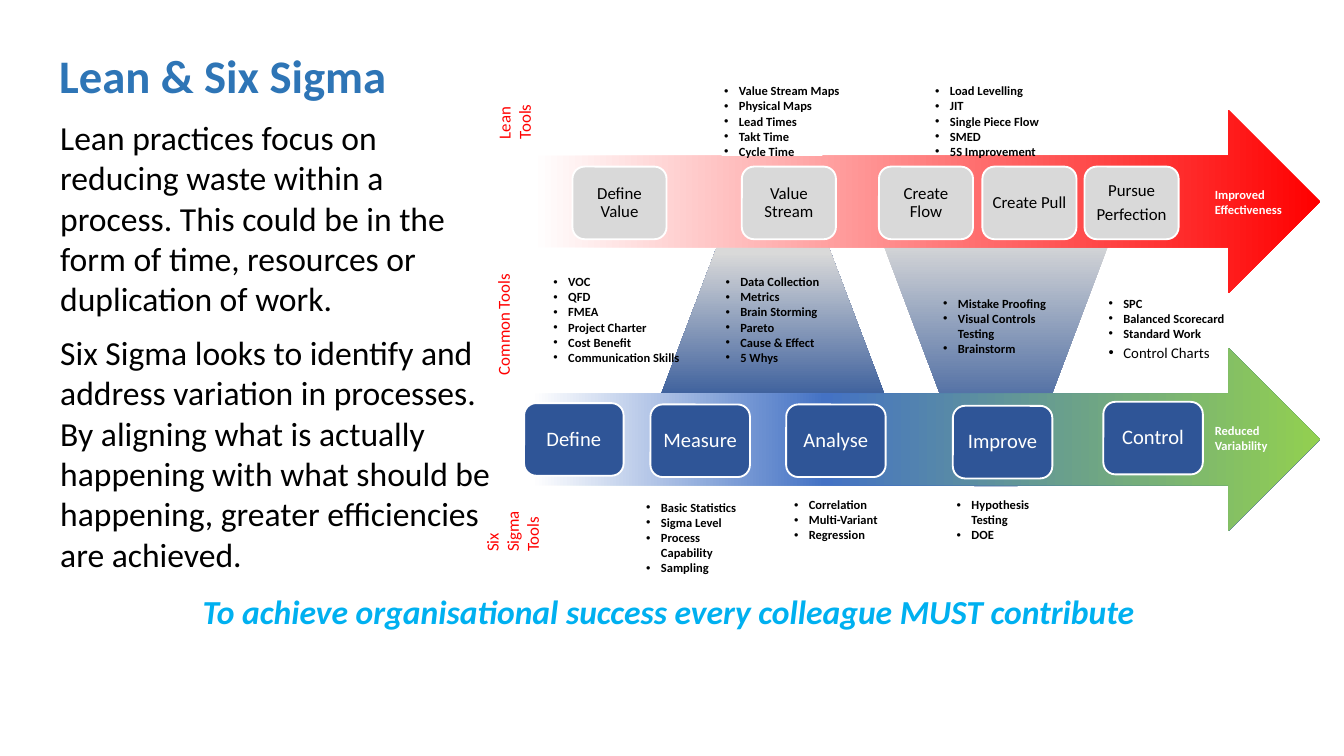
from lxml.etree import SubElement
from pptx import Presentation
from pptx.dml.color import RGBColor
from pptx.enum.shapes import MSO_SHAPE as Preset
from pptx.enum.text import MSO_ANCHOR as Anchor, MSO_AUTO_SIZE as AutoSize, PP_ALIGN as Align
from pptx.oxml import parse_xml
from pptx.oxml.ns import nsdecls, qn
from pptx.util import Emu, Pt

EMU_PER_PX = 9144
FONT = "Calibri"
SMALL = 6.75
COLOURS = {
    "white": "FFFFFF", "black": "000000", "grey": "D9D9D9", "navy": "2F5597",
    "red": "FF0000", "blue": "4472C4", "green": "92D050", "title": "2E75B6",
    "slogan": "00B0F0",
}
LEAN_STEPS = [
    (426, 124, ["Define Value"]), (552, 124, ["Value Stream"]),
    (654, 124, ["Create Flow"]), (731, 124, ["Create Pull"]),
    (807, 124, ["Pursue", "Perfection"]),
]
SIGMA_STEPS = [
    (390, 300, ["Define"]), (484, 301, ["Measure"]), (585, 301, ["Analyse"]),
    (709, 302, ["Improve"]), (821, 299, ["Control"]),
]
TOOL_LISTS = [
    ((530, 199, 92, 78), ["Data Collection", "Metrics", "Brain Storming", "Pareto",
                          "Cause & Effect", "5 Whys"]),
    ((692, 215, 113, 84), ["Mistake Proofing", "Visual Controls Testing", "Brainstorm"]),
    ((686, 57, 101, 67), ["Load Levelling", "JIT", "Single Piece Flow", "SMED",
                          "5S Improvement"]),
    ((529, 57, 110, 67), ["Value Stream Maps", "Physical Maps", "Lead Times",
                          "Takt Time", "Cycle Time"]),
    ((471, 367, 98, 78), ["Basic Statistics", "Sigma Level", "Process Capability",
                          "Sampling"]),
    ((581, 365, 98, 56), ["Correlation", "Multi-Variant", "Regression"]),
    ((702, 365, 98, 56), ["Hypothesis Testing", "DOE"]),
    ((815, 215, 113, 73), ["SPC", "Balanced Scorecard", "Standard Work"]),
    ((402, 199, 117, 129), ["VOC", "QFD", "FMEA", "Project Charter", "Cost Benefit",
                            "Communication Skills"]),
]
ROW_LABELS = [
    ((346, 57, 73, 40), ["Lean", "Tools"]),
    ((349, 360, 65, 56), ["Six Sigma", "Tools"]),
    ((302, 204, 145, 25), ["Common Tools"]),
]
OUTCOMES = [
    ((894, 134, 72, 33), ["Improved", "Effectiveness"]),
    ((894, 310, 65, 33), ["Reduced Variability"]),
]
INTRO = [
    "Lean practices focus on reducing waste within a process. This could be in the "
    "form of time, resources or duplication of work.",
    "Six Sigma looks to identify and address variation in processes. By aligning what "
    "is actually happening with what should be happening, greater efficiencies are achieved.",
]


def px(length):
    """Turn px into EMU."""
    return Emu(length * EMU_PER_PX)


def rgb(colour):
    """Look up a named colour."""
    return RGBColor.from_string(COLOURS[colour])


def write(frame, lines, size, colour, bold=False, italic=False, align=Align.LEFT,
          spacing=None, after=0, gap=0, bulleted=False):
    """Fill a text frame with one paragraph per line."""
    frame.word_wrap = True
    for index, line in enumerate(lines):
        para = frame.paragraphs[0] if index == 0 else frame.add_paragraph()
        para.alignment = align
        para.space_after = Pt(after)
        para.space_before = Pt(gap if index else 0)
        if spacing:
            para.line_spacing = spacing
        if bulleted:
            props = para._p.get_or_add_pPr()
            props.set("marL", str(px(11)))
            props.set("indent", str(-px(11)))
            SubElement(props, qn("a:buFont"), typeface="Arial")
            SubElement(props, qn("a:buChar"), char="•")
        run = para.add_run()
        run.text = line
        run.font.name = FONT
        run.font.size = Pt(size)
        run.font.bold = bold
        run.font.italic = italic
        run.font.color.rgb = rgb(colour)


def add_text(slide, area, lines, size, colour, rotation=0, **style):
    """Add a text box that grows with its text."""
    box = slide.shapes.add_textbox(*map(px, area))
    box.rotation = rotation
    write(box.text_frame, lines, size, colour, **style)
    box.text_frame.auto_size = AutoSize.SHAPE_TO_FIT_TEXT


def add_plain(slide, preset, area):
    """Add a preset shape without shadow or outline."""
    shape = slide.shapes.add_shape(preset, *map(px, area))
    shape.shadow.inherit = False
    shape.line.fill.background()
    return shape


def add_gradient(slide, preset, area, stops, angle=0, rotation=0):
    """Add a preset shape with a linear gradient."""
    shape = add_plain(slide, preset, area)
    shape.rotation = rotation
    marks = "".join(
        f'<a:gs pos="{percent * 1000}"><a:srgbClr val="{COLOURS[colour]}"/></a:gs>'
        for percent, colour in stops)
    gradient = parse_xml(
        f'<a:gradFill {nsdecls("a")} rotWithShape="1"><a:gsLst>{marks}</a:gsLst>'
        f'<a:lin ang="{angle * 60000}" scaled="0"/></a:gradFill>')
    shape._element.spPr.find(qn("a:prstGeom")).addnext(gradient)


def add_mask(slide, area):
    """Add a white rectangle that trims a funnel."""
    mask = add_plain(slide, Preset.RECTANGLE, area)
    mask.fill.solid()
    mask.fill.fore_color.rgb = rgb("white")


def add_steps(slide, steps, width, fill, size, colour):
    """Add the rounded step boxes of one arrow."""
    for left, top, lines in steps:
        step = add_plain(slide, Preset.ROUNDED_RECTANGLE, (left, top, width, 54))
        step.fill.solid()
        step.fill.fore_color.rgb = rgb(fill)
        step.line.color.rgb = rgb("white")
        step.line.width = Pt(1)
        frame = step.text_frame
        frame.margin_left = frame.margin_right = px(3)
        frame.margin_top = frame.margin_bottom = px(3)
        frame.vertical_anchor = Anchor.MIDDLE
        write(frame, lines, size, colour, align=Align.CENTER, spacing=0.9, after=3)


def add_title(slide, text):
    """Place and format the title placeholder."""
    title = slide.shapes.title
    title.left, title.top, title.width, title.height = map(px, (34, 32, 862, 52))
    title.text_frame.vertical_anchor = Anchor.MIDDLE
    write(title.text_frame, [text], 25, "title", bold=True, spacing=0.9)


def main():
    """Build the Lean and Six Sigma slide."""
    deck = Presentation()
    deck.slide_width = px(1000)
    deck.slide_height = Emu(deck.slide_width * 9 // 16)
    slide = deck.slides.add_slide(deck.slide_layouts[5])
    add_title(slide, "Lean & Six Sigma")

    add_gradient(slide, Preset.ISOSCELES_TRIANGLE, (633, 118, 216, 285),
                 [(21, "grey"), (73, "navy")], angle=270, rotation=180)
    add_gradient(slide, Preset.ISOSCELES_TRIANGLE, (467, 74, 216, 285),
                 [(19, "navy"), (60, "grey")], angle=270)
    add_gradient(slide, Preset.RIGHT_ARROW, (378, 82, 604, 136),
                 [(3, "white"), (100, "red")])
    add_steps(slide, LEAN_STEPS, 70, "grey", 9, "black")
    add_gradient(slide, Preset.RIGHT_ARROW, (378, 259, 604, 136),
                 [(3, "white"), (39, "blue"), (100, "green")])
    add_steps(slide, SIGMA_STEPS, 74, "navy", 11, "white")
    for area in ((537, 63, 75, 53), (702, 362, 75, 53)):
        add_mask(slide, area)

    for area, tools in TOOL_LISTS:
        add_text(slide, area, tools, SMALL, "black", bold=True, bulleted=True)
    add_text(slide, (815, 251, 98, 40), ["Control Charts"], 7.9, "black", bulleted=True)
    for area, lines in ROW_LABELS:
        add_text(slide, area, lines, 9, "red", rotation=270)
    for area, lines in OUTCOMES:
        add_text(slide, area, lines, SMALL, "white", bold=True)
    add_text(slide, (46, 435, 909, 40),
             ["To achieve organisational success every colleague MUST contribute "],
             18, "slogan", bold=True, italic=True, align=Align.CENTER)
    add_text(slide, (35, 82, 343, 353), INTRO, 18, "black", gap=7.3)
    deck.save("out.pptx")


if __name__ == "__main__":
    main()
